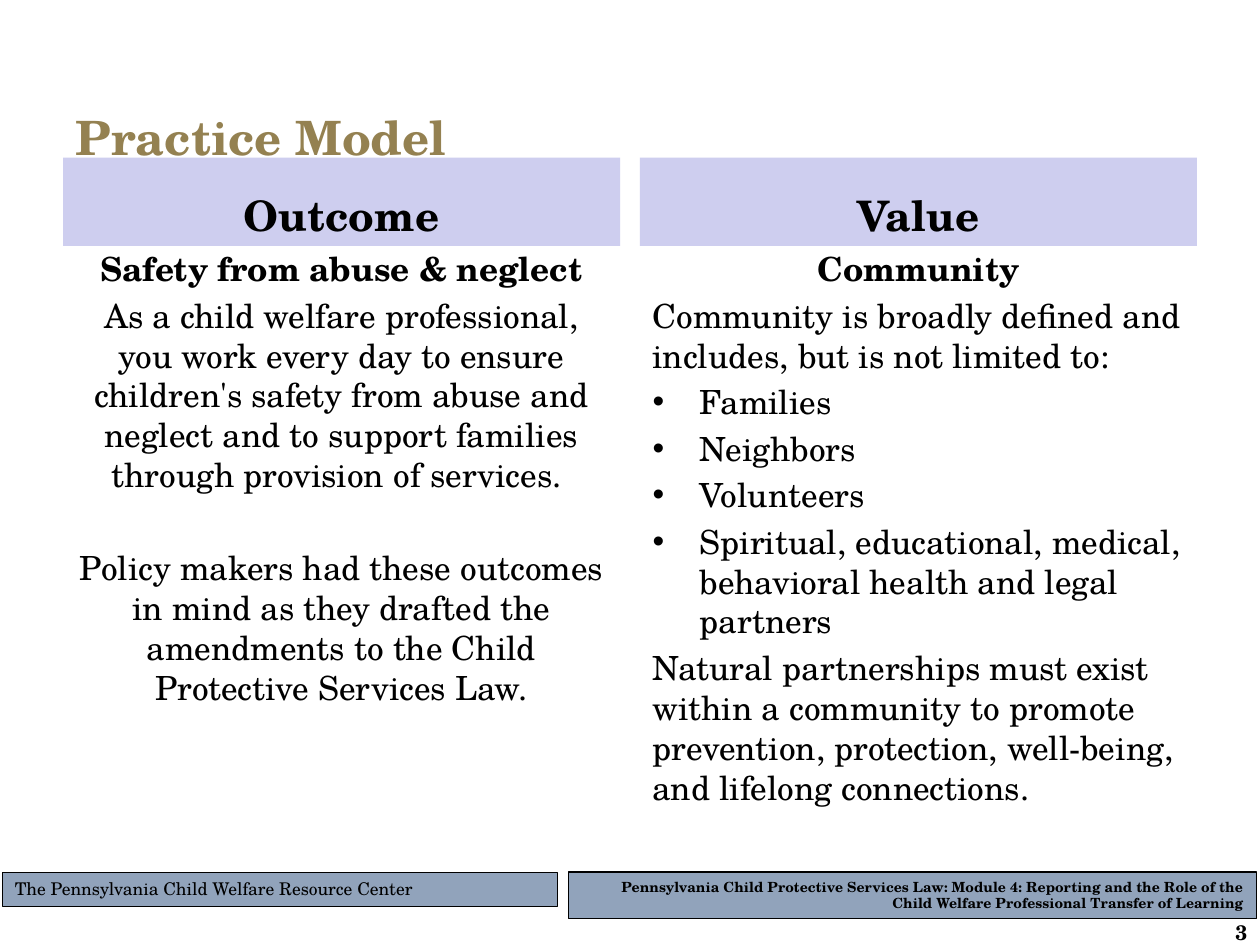
from pptx import Presentation, util as u
from pptx.dml.color import RGBColor
from pptx.enum import shapes, text
from pptx.oxml.ns import qn
from lxml import etree

Cm, Pt = u.Cm, u.Pt
LEFT, CENTER, RIGHT = text.PP_ALIGN.LEFT, text.PP_ALIGN.CENTER, text.PP_ALIGN.RIGHT
TOP, MIDDLE, BOTTOM = (text.MSO_ANCHOR.TOP, text.MSO_ANCHOR.MIDDLE,
                       text.MSO_ANCHOR.BOTTOM)

# Content: each column has a heading, a bold lead and (style, text) paragraphs
TITLE = "Practice Model"
COLUMNS = [
    ("Outcome", "Safety from abuse & neglect", [
        ("center", "As a child welfare professional, you work every day to ensure "
                   "children's safety from abuse and neglect and to support families "
                   "through provision of services. "),
        ("apart", "Policy makers had these outcomes in mind as they drafted the "
                  "amendments to the Child Protective Services Law."),
    ]),
    ("Value", "Community", [
        ("left", "Community is broadly defined and includes, but is not limited to:"),
        ("bullet", "Families"),
        ("bullet", "Neighbors"),
        ("bullet", "Volunteers"),
        ("bullet", "Spiritual, educational, medical, behavioral health and legal "
                   "partners"),
        ("left", "Natural partnerships must exist within a community to promote "
                 "prevention, protection, well-being, and lifelong connections."),
    ]),
]
CENTER_NAME = "The Pennsylvania Child Welfare Resource Center"
COURSE_NAME = ("Pennsylvania Child Protective Services Law: Module 4: Reporting and the "
               "Role of the Child Welfare Professional Transfer of Learning")
PAGE_NUMBER = "3"

THEME = {
    "font": "TeX Gyre Schola",
    "ink": RGBColor.from_string("000000"),
    "title": RGBColor.from_string("948151"),
    "band": RGBColor.from_string("CECEEF"),
    "footer": RGBColor.from_string("91A3BB"),
    "title_size": 27, "heading_size": 24, "body_size": 19,
    "number_size": 12, "center_size": 10, "course_size": 8,
}
# Alignment and space before, in points
STYLES = {"center": (CENTER, 3.8), "apart": (CENTER, 30.4),
          "left": (LEFT, 3.8), "bullet": (LEFT, 3.8)}

# Layout in centimetres
MARGIN, CONTENT_WIDTH, GAP = 1.27, 22.86, 0.4
COLUMN_WIDTH = (CONTENT_WIDTH - GAP) / 2
BULLET_INDENT = 0.95


def place(box, left, top, width, height, anchor=TOP):
    box.left, box.top, box.width, box.height = map(Cm, (left, top, width, height))
    frame = box.text_frame
    frame.word_wrap = True
    frame.auto_size = text.MSO_AUTO_SIZE.NONE
    frame.vertical_anchor = anchor
    return frame


def set_bullet(para, bulleted):
    props = para._p.get_or_add_pPr()
    indent = Cm(BULLET_INDENT) if bulleted else 0
    props.set("marL", str(indent))
    props.set("indent", str(-indent))
    if bulleted:
        etree.SubElement(props, qn("a:buFont"), typeface="Arial")
        etree.SubElement(props, qn("a:buChar"), char="•")
    else:
        etree.SubElement(props, qn("a:buNone"))


def write(para, words, size, align=LEFT, bold=False, color="ink", before=0,
          bulleted=False):
    set_bullet(para, bulleted)
    para.alignment = align
    para.space_before = Pt(before)
    span = para.add_run()
    span.text = words
    font = span.font
    font.name, font.size, font.bold = THEME["font"], Pt(THEME[size]), bold
    font.color.rgb = THEME[color]


def paint(box, color):
    box.fill.solid()
    box.fill.fore_color.rgb = THEME[color]


deck = Presentation()
deck.slide_width, deck.slide_height = Cm(25.4), Cm(19.05)
page = deck.slides.add_slide(deck.slide_layouts.get_by_name("Comparison"))
holders = {box.placeholder_format.idx: box for box in page.placeholders}

# Footer bars
for words, left, width, height, size, line, align, bold in [
    (COURSE_NAME, 11.46, 13.87, 0.94, "course_size", 0.75, RIGHT, True),
    (CENTER_NAME, 0.05, 11.18, 0.69, "center_size", 0.5, LEFT, False),
]:
    bar = page.shapes.add_shape(shapes.MSO_SHAPE.RECTANGLE, 0, 0, 0, 0)
    bar.shadow.inherit = False
    paint(bar, "footer")
    bar.line.color.rgb = THEME["ink"]
    bar.line.width = Pt(line)
    frame = place(bar, left, 17.58, width, height)
    write(frame.paragraphs[0], words, size, align, bold)

# Title
frame = place(holders[0], MARGIN, 2.11, CONTENT_WIDTH, 1.3, MIDDLE)
write(frame.paragraphs[0], TITLE, "title_size", bold=True, color="title")

# Two columns: heading band above body text
for number, (heading, lead, paragraphs) in enumerate(COLUMNS):
    left = MARGIN + number * (COLUMN_WIDTH + GAP)
    band, body = holders[1 + 2 * number], holders[2 + 2 * number]
    paint(band, "band")
    frame = place(band, left, 3.18, COLUMN_WIDTH, 1.78, BOTTOM)
    write(frame.paragraphs[0], heading, "heading_size", CENTER, True)

    frame = place(body, left, 4.88, COLUMN_WIDTH, 11.68)
    write(frame.paragraphs[0], lead, "body_size", CENTER, True)
    for style, words in paragraphs:
        align, before = STYLES[style]
        write(frame.add_paragraph(), words, "body_size", align, before=before,
              bulleted=style == "bullet")

# Page number
box = page.shapes.add_textbox(0, 0, 0, 0)
frame = place(box, 22.58, 18.52, 2.82, 0.53, MIDDLE)
frame.margin_top = frame.margin_bottom = 0
write(frame.paragraphs[0], PAGE_NUMBER, "number_size", RIGHT, True)

deck.save("out.pptx")
